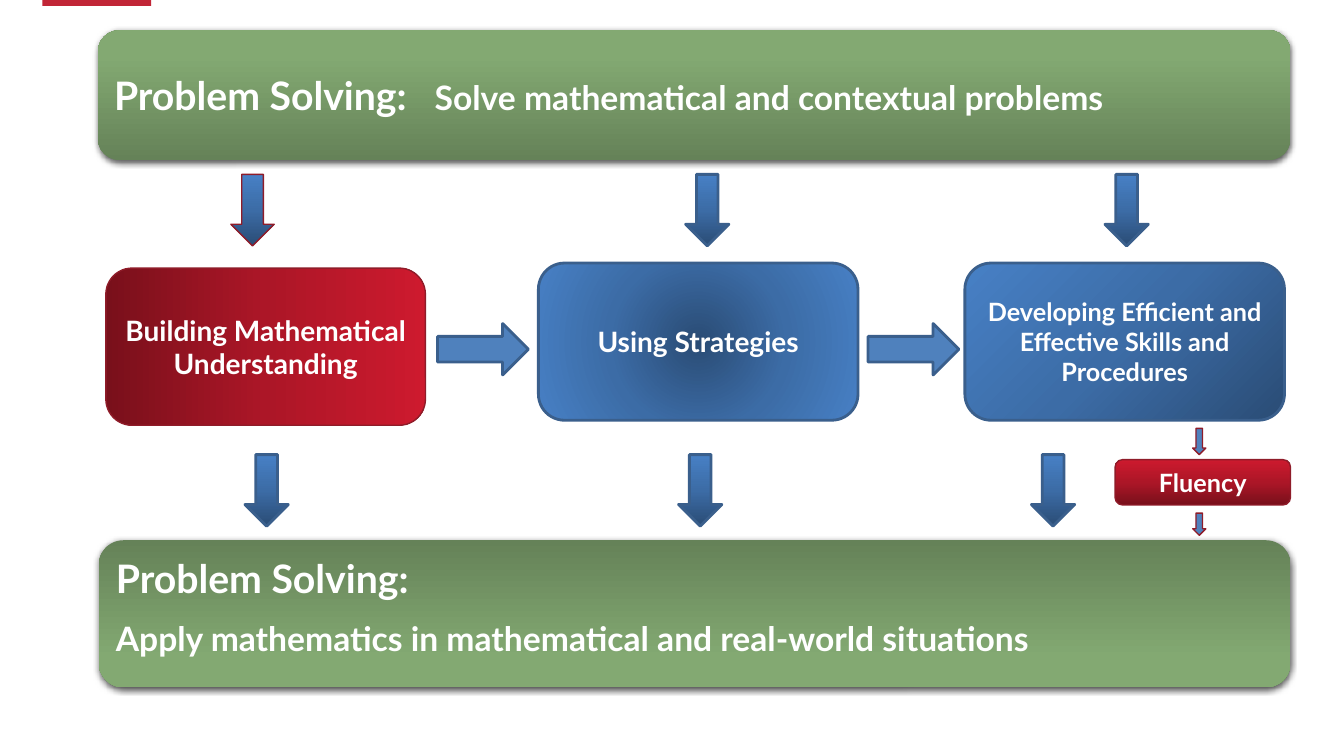
from dataclasses import dataclass

from lxml import etree
from pptx import Presentation, util as u
from pptx.dml.color import RGBColor
from pptx.enum import shapes, text
from pptx.oxml import parse_xml
from pptx.oxml.ns import nsdecls, qn

PX = u.Inches(1) // 100  # EMU in one px, 100 px to the inch
DOWN, RIGHT = shapes.MSO_SHAPE.DOWN_ARROW, shapes.MSO_SHAPE.RIGHT_ARROW
ROUNDED = shapes.MSO_SHAPE.ROUNDED_RECTANGLE


@dataclass(frozen=True)
class Theme:
    font: str = "Lato"
    white: str = "FFFFFF"
    accent: str = "C12637"
    flat_blue: str = "4F81BD"
    blue_line: tuple = ("3A5F8C", 2)
    red_line: tuple = ("8F1C29", 1)
    green: tuple = ((0, "658258"), (80, "83A972"), (100, "84AB71"))
    red: tuple = ((0, "79101B"), (50, "AC1627"), (100, "CD1A2E"))
    blue: tuple = ((0, "2A4C75"), (50, "3C6CA6"), (100, "4780C5"))
    heading: int = 28
    statement: int = 24
    step: int = 20
    small_step: int = 18


THEME = Theme()


def set_gradient(shape, stops, angle):
    """Fill with stops at a clockwise angle, or from the centre if angle is None."""
    stop_xml = "".join(
        f'<a:gs pos="{position * 1000}"><a:srgbClr val="{color}"/></a:gs>'
        for position, color in stops)
    if angle is None:
        direction = ('<a:path path="circle"><a:fillToRect l="50000" t="50000" '
                     'r="50000" b="50000"/></a:path>')
    else:
        direction = f'<a:lin ang="{angle * 60000}" scaled="0"/>'
    gradient = parse_xml(f'<a:gradFill {nsdecls("a")} rotWithShape="1">'
                         f'<a:gsLst>{stop_xml}</a:gsLst>{direction}</a:gradFill>')
    shape.fill.background()
    properties = shape.element.spPr
    properties.replace(properties.find(qn("a:noFill")), gradient)


def add_box(slide, kind, bounds, fill, line=None, angle=None):
    """Add a preset shape; fill is one colour or a tuple of gradient stops."""
    shape = slide.shapes.add_shape(kind, *(length * PX for length in bounds))
    shape.shadow.inherit = False
    if line:
        color, width = line
        shape.line.color.rgb = RGBColor.from_string(color)
        shape.line.width = u.Pt(width)
    else:
        shape.line.fill.background()
    if isinstance(fill, str):
        shape.fill.solid()
        shape.fill.fore_color.rgb = RGBColor.from_string(fill)
    else:
        set_gradient(shape, fill, angle)
    return shape


def add_run(paragraph, wording, size):
    run = paragraph.add_run()
    run.text = wording
    run.font.name = THEME.font
    run.font.size = u.Pt(size)
    run.font.bold = True
    run.font.color.rgb = RGBColor.from_string(THEME.white)


def add_step(slide, bounds, wording, size, fill, line, angle):
    step = add_box(slide, ROUNDED, bounds, fill, line, angle)
    step.text_frame.vertical_anchor = text.MSO_ANCHOR.MIDDLE
    paragraph = step.text_frame.paragraphs[0]
    paragraph.alignment = text.PP_ALIGN.CENTER
    add_run(paragraph, wording, size)


def add_banner(slide, bounds, angle, anchor):
    """Add a green banner with a soft shadow and return its text frame."""
    banner = add_box(slide, ROUNDED, bounds, THEME.green, angle=angle)
    effects = banner.element.spPr.find(qn("a:effectLst"))
    shadow = etree.SubElement(
        effects, qn("a:outerShdw"), blurRad=str(u.Pt(4.5)),
        dist=str(u.Pt(1.5)), dir="5400000", rotWithShape="0")
    color = etree.SubElement(shadow, qn("a:srgbClr"), val="000000")
    etree.SubElement(color, qn("a:alpha"), val="63000")
    frame = banner.text_frame
    frame.vertical_anchor = anchor
    frame.paragraphs[0].alignment = text.PP_ALIGN.LEFT
    return frame


def add_tab_stop(paragraph, position):
    tabs = etree.SubElement(paragraph._p.get_or_add_pPr(), qn("a:tabLst"))
    etree.SubElement(tabs, qn("a:tab"), pos=str(position * PX), algn="l")


def add_banners(slide):
    frame = add_banner(slide, (97, 30, 1183, 129), 270, text.MSO_ANCHOR.MIDDLE)
    paragraph = frame.paragraphs[0]
    add_tab_stop(paragraph, 318)
    add_run(paragraph, "Problem Solving:\t", THEME.heading)
    add_run(paragraph, "Solve mathematical and contextual problems", THEME.statement)

    frame = add_banner(slide, (98, 536, 1182, 146), 90, text.MSO_ANCHOR.TOP)
    frame.margin_top = 7 * PX
    add_run(frame.paragraphs[0], "Problem Solving:", THEME.heading)
    paragraph = frame.add_paragraph()
    paragraph.alignment = text.PP_ALIGN.LEFT
    paragraph.space_before = u.Pt(12)
    add_run(paragraph, "Apply mathematics in mathematical and real-world situations",
            THEME.statement)


def add_steps(slide):
    steps = (
        (105, 266, "Building Mathematical Understanding", THEME.step,
         THEME.red, THEME.red_line, 0),
        (534, 261, "Using Strategies", THEME.step,
         THEME.blue, THEME.blue_line, None),
        (957, 261, "Developing Efficient and Effective Skills and Procedures",
         THEME.small_step, THEME.blue, THEME.blue_line, 225),
    )
    for left, top, *content in steps:
        add_step(slide, (left, top, 317, 156), *content)
    add_step(slide, (1106, 456, 174, 45), "Fluency", THEME.small_step,
             THEME.red, THEME.red_line, 270)


def add_arrows(slide):
    for top, lefts in ((173, (229, 680, 1096)), (451, (243, 673, 1023))):
        for left in lefts:
            line = THEME.red_line if left == 229 else THEME.blue_line
            add_box(slide, DOWN, (left, top, 43, 71), THEME.blue, line, 270)
    for left in (434, 861):
        add_box(slide, RIGHT, (left, 321, 90, 51), THEME.flat_blue, THEME.blue_line)
    for top, height in ((425, 26), (509, 22)):
        add_box(slide, DOWN, (1183, top, 13, height), THEME.flat_blue, THEME.red_line)


def main():
    presentation = Presentation()
    presentation.slide_width = 1333 * PX
    presentation.slide_height = 750 * PX
    slide = presentation.slides.add_slide(presentation.slide_layouts[6])
    add_box(slide, shapes.MSO_SHAPE.RECTANGLE, (42, 0, 108, 6), THEME.accent)
    add_banners(slide)
    add_steps(slide)
    add_arrows(slide)
    presentation.save("out.pptx")


if __name__ == "__main__":
    main()
